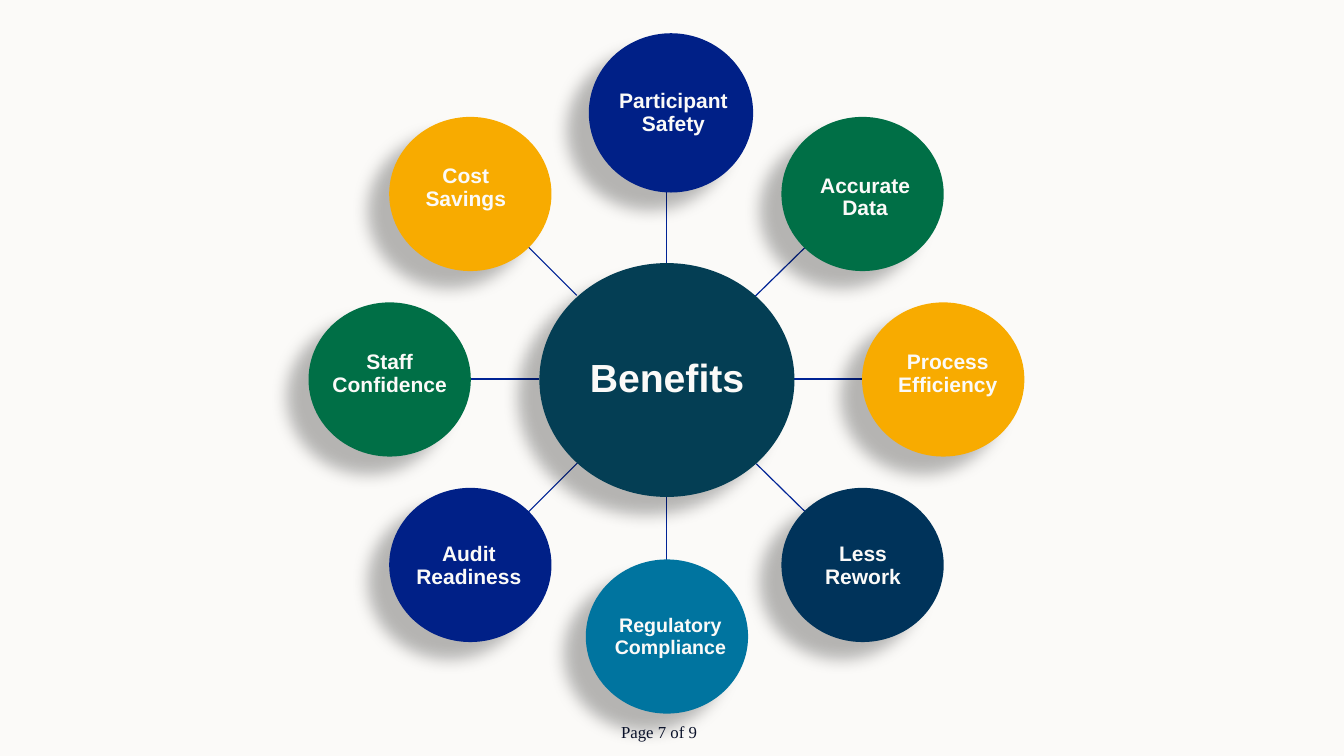
from lxml.etree import SubElement
from pptx import Presentation
from pptx.dml.color import RGBColor
from pptx.enum.shapes import MSO_CONNECTOR, MSO_SHAPE
from pptx.enum.text import MSO_ANCHOR, PP_ALIGN
from pptx.oxml.ns import qn
from pptx.util import Inches, Pt

PALE, INK, LINE = "FBFAF8", "0A122A", "002395"
BLUE, GREEN, NAVY = "002087", "006F46", "00335A"
AMBER, TEAL, PETROL = "F8AB00", "00749F", "043E54"

SIZE = (1.61, 1.53)
# label, fill, circle box, label box, font size, spoke (from x, y, to x, y)
BENEFITS = [
    ("Participant Safety", BLUE, (5.84, 0.33, 1.63, 1.58), (6.11, 0.58, 1.14, 1.08), 15,
     (6.61, 2.61, 6.61, 1.85)),
    ("Accurate Data", GREEN, (7.75, 1.16, *SIZE), (8.08, 1.42, 1, 1.08), 15,
     (7.49, 2.94, 8.01, 2.43)),
    ("Less Rework", NAVY, (7.75, 4.84, *SIZE), (8.03, 5.08, 1.06, 1.08), 15,
     (7.5, 4.6, 8.02, 5.11)),
    ("Process Efficiency", AMBER, (8.55, 3, *SIZE), (8.83, 3.17, 1.14, 1.08), 15,
     (7.88, 3.76, 8.58, 3.76)),
    ("Regulatory Compliance", TEAL, (5.81, 5.55, *SIZE), (6.08, 5.78, 1.14, 1.08), 14,
     (6.61, 4.87, 6.61, 5.62)),
    ("Audit Readiness", BLUE, (3.86, 4.84, *SIZE), (4.08, 5.08, 1.14, 1.08), 15,
     (5.73, 4.59, 5.22, 5.1)),
    ("Cost Savings", AMBER, (3.86, 1.16, *SIZE), (4.08, 1.33, 1.08, 1.08), 15,
     (5.72, 2.93, 5.21, 2.42)),
    ("Staff Confidence", GREEN, (3.06, 3, *SIZE), (3.25, 3.17, 1.23, 1.08), 15,
     (5.35, 3.76, 4.64, 3.76)),
]


def color(value):
    return RGBColor.from_string(value)


def inches(values):
    return [Inches(value) for value in values]


class WheelSlide:
    def __init__(self, presentation):
        self.slide = presentation.slides.add_slide(presentation.slide_layouts[6])
        fill = self.slide.background.fill
        fill.solid()
        fill.fore_color.rgb = color(PALE)

    def spoke(self, ends):
        connector = self.slide.shapes.add_connector(MSO_CONNECTOR.STRAIGHT, *inches(ends))
        connector.line.color.rgb = color(LINE)
        connector.line.width = Pt(0.85)
        SubElement(connector._element.spPr, qn("a:effectLst"))

    def circle(self, box, fill):
        shape = self.slide.shapes.add_shape(MSO_SHAPE.OVAL, *inches(box))
        shape.fill.solid()
        shape.fill.fore_color.rgb = color(fill)
        shape.line.fill.background()
        self.soft_shadow(shape)

    def soft_shadow(self, shape):
        """Cast a blurred shadow to the lower left."""
        shape.shadow.inherit = False
        effects = shape._element.spPr.find(qn("a:effectLst"))
        shadow = SubElement(effects, qn("a:outerShdw"), blurRad=str(Pt(11.8)),
                            dist=str(Pt(19.7)), dir=str(141 * 60000),
                            algn="ctr", rotWithShape="0")
        black = SubElement(shadow, qn("a:srgbClr"), val="000000")
        SubElement(black, qn("a:alpha"), val="28000")

    def text(self, text, box, size, font, ink, margins, spacing):
        shape = self.slide.shapes.add_textbox(*inches(box))
        frame = shape.text_frame
        frame.word_wrap = True
        (frame.margin_left, frame.margin_top,
         frame.margin_right, frame.margin_bottom) = inches(margins)
        frame.text = text
        paragraph = frame.paragraphs[0]
        paragraph.line_spacing = spacing
        run_font = paragraph.runs[0].font
        run_font.name = font
        run_font.size = Pt(size)
        run_font.color.rgb = color(ink)
        return frame

    def label(self, text, box, size, margin=0.01):
        frame = self.text(text, box, size, "Arial", PALE, [margin] * 4, 0.9)
        frame.vertical_anchor = MSO_ANCHOR.MIDDLE
        paragraph = frame.paragraphs[0]
        paragraph.alignment = PP_ALIGN.CENTER
        paragraph.runs[0].font.bold = True

    def footer(self, text):
        self.text(text, (5.03, 7.17, 2.39, 0.27), 12, "Times New Roman", INK,
                  (1.13, 0.01, 0, 0), Pt(13.2))


def main():
    presentation = Presentation()
    presentation.slide_width = Inches(13.33)
    presentation.slide_height = Inches(7.5)
    wheel = WheelSlide(presentation)
    for text, fill, circle_box, label_box, size, ends in BENEFITS:
        wheel.spoke(ends)
        wheel.circle(circle_box, fill)
        wheel.label(text, label_box, size)
    wheel.circle((5.35, 2.61, 2.53, 2.32), PETROL)
    wheel.label("Benefits", (5.72, 2.95, 1.79, 1.64), 28, margin=0.02)
    wheel.footer("Page 7 of 9")
    presentation.save("out.pptx")


if __name__ == "__main__":
    main()
